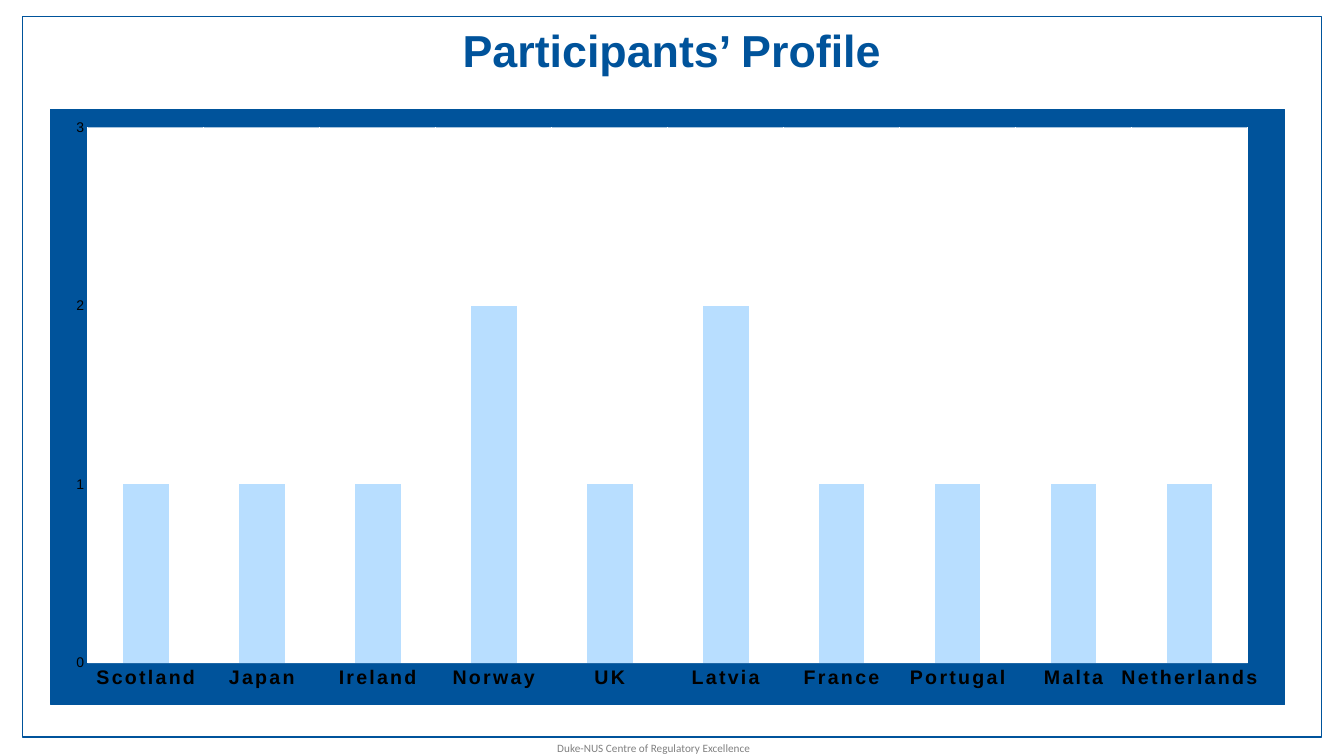
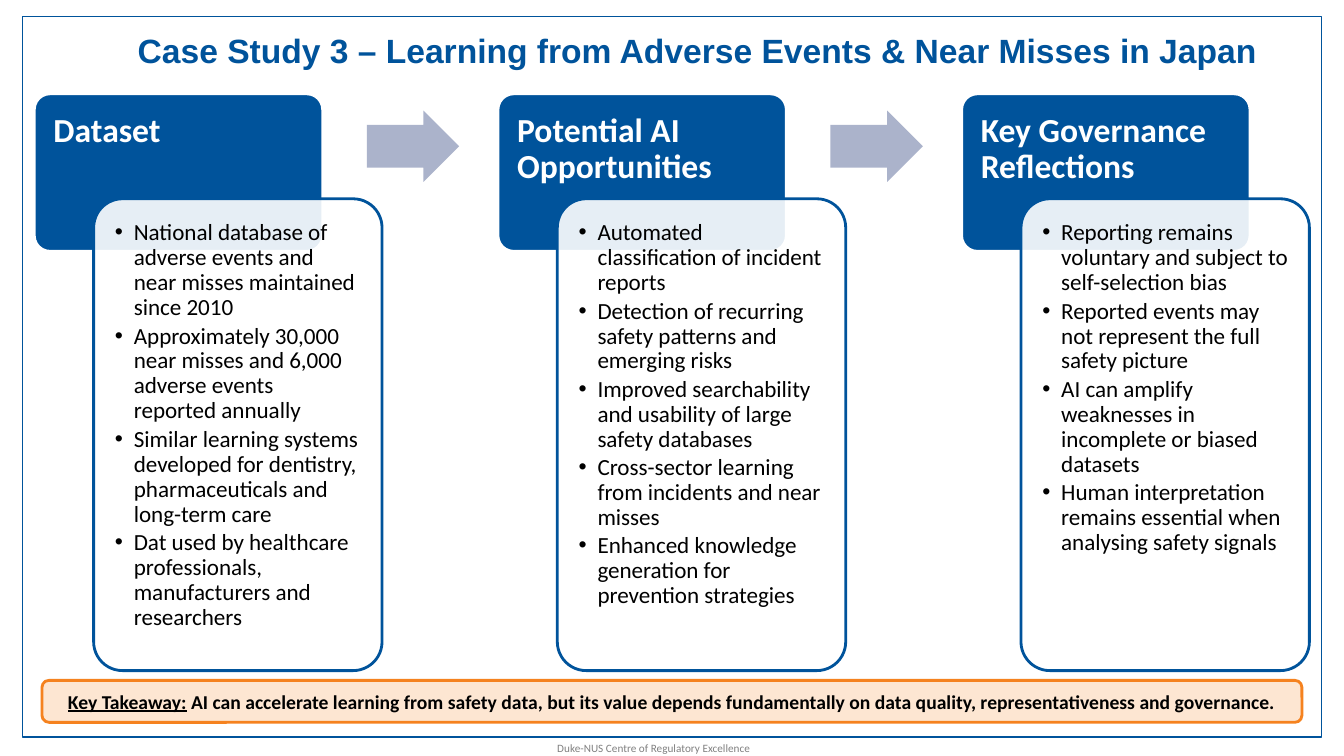
from lxml.etree import SubElement
from pptx import Presentation
from pptx.chart.data import CategoryChartData
from pptx.dml.color import RGBColor
from pptx.enum.chart import XL_CHART_TYPE, XL_TICK_MARK
from pptx.enum.shapes import MSO_SHAPE
from pptx.enum.text import MSO_ANCHOR, PP_ALIGN
from pptx.oxml import parse_xml
from pptx.oxml.ns import nsdecls, qn
from pptx.util import Pt

BLUE, WHITE, BLACK, GREY = "00539B", "FFFFFF", "000000", "808080"
BAR, ARROW, ORANGE, PEACH = "B8DEFF", "ABB3CB", "F5821F", "FDE6D2"
HEAD_FONT, BODY_FONT = "Arial", "Calibri"
SLIDE_W, SLIDE_H = 960, 540

COUNTRIES = {
    "Scotland": 1, "Japan": 1, "Ireland": 1, "Norway": 2, "UK": 1,
    "Latvia": 2, "France": 1, "Portugal": 1, "Malta": 1, "Netherlands": 1,
}

COLUMNS = [
    ("Dataset", [
        "National database of adverse events and near misses maintained since 2010",
        "Approximately 30,000 near misses and 6,000 adverse events reported annually",
        "Similar learning systems developed for dentistry, pharmaceuticals and long-term care",
        "Dat used by healthcare professionals, manufacturers and researchers",
    ]),
    ("Potential AI Opportunities", [
        "Automated classification of incident reports",
        "Detection of recurring safety patterns and emerging risks",
        "Improved searchability and usability of large safety databases",
        "Cross-sector learning from incidents and near misses",
        "Enhanced knowledge generation for prevention strategies",
    ]),
    ("Key Governance Reflections", [
        "Reporting remains voluntary and subject to self-selection bias",
        "Reported events may not represent the full safety picture",
        "AI can amplify weaknesses in incomplete or biased datasets",
        "Human interpretation remains essential when analysing safety signals",
    ]),
]
COLUMN_X, COLUMN_PITCH, CARD_W = 24.5, 331.2, 206


def rgb(hex_color):
    return RGBColor.from_string(hex_color)


def style_font(font, size, color, name=BODY_FONT, bold=False):
    font.size, font.name, font.bold = Pt(size), name, bold
    font.color.rgb = rgb(color)


def add_run(p, text, size, color, name=BODY_FONT, bold=False):
    r = p.add_run()
    r.text = text
    style_font(r.font, size, color, name, bold)
    return r


def set_frame(sp, insets=(0, 0, 0, 0), anchor=MSO_ANCHOR.MIDDLE):
    """Wrap the text, set left, top, right and bottom insets, and return the frame."""
    tf = sp.text_frame
    tf.word_wrap, tf.vertical_anchor = True, anchor
    tf.margin_left, tf.margin_top, tf.margin_right, tf.margin_bottom = map(Pt, insets)
    return tf


def add_text(s, box, text, size, color, name=BODY_FONT, bold=False, align=PP_ALIGN.LEFT):
    p = set_frame(s.shapes.add_textbox(*map(Pt, box))).paragraphs[0]
    p.alignment = align
    add_run(p, text, size, color, name, bold)


def add_box(s, kind, box, fill=None, line=None, width=2, adjust=()):
    sp = s.shapes.add_shape(kind, *map(Pt, box))
    sp.shadow.inherit = False
    for i, value in enumerate(adjust):
        sp.adjustments[i] = value
    if fill:
        sp.fill.solid()
        sp.fill.fore_color.rgb = rgb(fill)
    else:
        sp.fill.background()
    if line:
        sp.line.color.rgb = rgb(line)
        sp.line.width = Pt(width)
    else:
        sp.line.fill.background()
    return sp


def set_opacity(sp, percent):
    color = sp.element.xpath("./p:spPr/a:solidFill/a:srgbClr")[0]
    SubElement(color, qn("a:alpha"), val=str(percent * 1000))


def add_bullet(p, indent):
    pPr = p._p.get_or_add_pPr()
    pPr.set("marL", str(Pt(indent)))
    pPr.set("indent", str(-Pt(indent)))
    SubElement(pPr, qn("a:buFont"), typeface="Arial")
    SubElement(pPr, qn("a:buChar"), char="•")


def new_slide(prs, title, size, left=0):
    """Add a slide with the frame, footer and title that all slides share."""
    s = prs.slides.add_slide(prs.slide_layouts[6])
    add_box(s, MSO_SHAPE.RECTANGLE, (16, 12, 928, 514.5), line=BLUE, width=0.75)
    add_text(s, (398, 528, 170, 12), "Duke-NUS Centre of Regulatory Excellence", 8, GREY)
    add_text(s, (left, 11.5, SLIDE_W - left, 48), title, size, BLUE, HEAD_FONT, True,
             PP_ALIGN.CENTER)
    return s


def chart_area_fill(fill, line=None):
    outline = f'<a:solidFill><a:srgbClr val="{line}"/></a:solidFill>' if line else "<a:noFill/>"
    return parse_xml(
        f'<c:spPr {nsdecls("c", "a")}><a:solidFill><a:srgbClr val="{fill}"/></a:solidFill>'
        f'<a:ln w="{Pt(0.75)}">{outline}</a:ln></c:spPr>')


def place_plot(chart, x, y, w, h):
    """Fix the inner plot area, in fractions of the chart."""
    plot_area = chart.element.xpath("./c:chart/c:plotArea")[0]
    for old in plot_area.findall(qn("c:layout")):
        plot_area.remove(old)
    values = "".join(f'<c:{k} val="{v}"/>' for k, v in zip("xywh", (x, y, w, h)))
    plot_area.insert(0, parse_xml(
        f'<c:layout {nsdecls("c")}><c:manualLayout><c:layoutTarget val="inner"/>'
        f'<c:xMode val="edge"/><c:yMode val="edge"/>{values}</c:manualLayout></c:layout>'))
    plot_area.append(chart_area_fill(WHITE))


def add_country_chart(s, box):
    data = CategoryChartData(number_format="0")
    data.categories = list(COUNTRIES)
    data.add_series("Series 1", list(COUNTRIES.values()))
    chart = s.shapes.add_chart(XL_CHART_TYPE.COLUMN_CLUSTERED, *map(Pt, box), data).chart
    chart.has_legend = chart.has_title = False
    style_font(chart.font, 10, BLACK)

    plot = chart.plots[0]
    plot.gap_width, plot.vary_by_categories = 154, False
    fill = plot.series[0].format.fill
    fill.solid()
    fill.fore_color.rgb = rgb(BAR)

    cat_axis, val_axis = chart.category_axis, chart.value_axis
    for axis in (cat_axis, val_axis):
        axis.major_tick_mark = axis.minor_tick_mark = XL_TICK_MARK.NONE
        axis.format.line.fill.background()
    style_font(cat_axis.tick_labels.font, 14, BLACK, HEAD_FONT, True)
    style_font(val_axis.tick_labels.font, 10, BLACK, HEAD_FONT)
    chart.element.xpath(".//c:catAx/c:txPr//a:defRPr")[0].set("spc", "150")
    cat_axis.has_major_gridlines, val_axis.has_major_gridlines = True, False
    grid = cat_axis.major_gridlines.format.line
    grid.color.rgb, grid.width = rgb(WHITE), Pt(0.75)
    val_axis.minimum_scale, val_axis.maximum_scale, val_axis.major_unit = 0, 3, 1

    place_plot(chart, 0.03, 0.03, 0.94, 0.9)
    chart.element.find(qn("c:chart")).addnext(chart_area_fill(BLUE, BLUE))


def add_column(s, x, heading, points):
    card = add_box(s, MSO_SHAPE.ROUNDED_RECTANGLE, (x, 67, CARD_W, 112.5), BLUE, WHITE,
                   adjust=(0.1,))
    p = set_frame(card, (10.4, 10.4, 10.4, 4), MSO_ANCHOR.TOP).paragraphs[0]
    p.alignment, p.line_spacing = PP_ALIGN.LEFT, 0.9
    add_run(p, heading, 24, WHITE, bold=True)

    panel = add_box(s, MSO_SHAPE.ROUNDED_RECTANGLE, (x + 42.4, 142, CARD_W, 337), WHITE, BLUE,
                    adjust=(0.1,))
    set_opacity(panel, 90)
    tf = set_frame(panel, (9.2, 9.8, 9.2, 9.2), MSO_ANCHOR.TOP)
    for i, point in enumerate(points):
        p = tf.add_paragraph() if i else tf.paragraphs[0]
        p.alignment, p.line_spacing, p.space_after = PP_ALIGN.LEFT, 0.9, Pt(2.5)
        add_bullet(p, 13.5)
        add_run(p, point, 16.5, BLACK)


def add_takeaway(s, label, text):
    bar = add_box(s, MSO_SHAPE.ROUNDED_RECTANGLE, (30, 486, 900, 30), PEACH, ORANGE)
    p = set_frame(bar).paragraphs[0]
    p.alignment = PP_ALIGN.CENTER
    add_run(p, label, 14, BLACK, bold=True).font.underline = True
    add_run(p, " ", 14, BLACK)
    add_run(p, text, 14, BLACK, bold=True)


def build_profile(prs):
    s = new_slide(prs, "Participants’ Profile", 32)
    add_country_chart(s, (36, 77.8, 882, 426))


def build_case_study(prs):
    s = new_slide(prs, "Case Study 3 – Learning from Adverse Events & Near Misses in Japan",
                  24, left=36)
    for i, (heading, points) in enumerate(COLUMNS):
        x = COLUMN_X + i * COLUMN_PITCH
        add_column(s, x, heading, points)
        if i < len(COLUMNS) - 1:
            add_box(s, MSO_SHAPE.RIGHT_ARROW, (x + 237.5, 79, 66, 51), ARROW,
                    adjust=(0.6, 0.5))
    add_takeaway(s, "Key Takeaway:",
                 "AI can accelerate learning from safety data, but its value depends "
                 "fundamentally on data quality, representativeness and governance.")


def main():
    prs = Presentation()
    prs.slide_width, prs.slide_height = Pt(SLIDE_W), Pt(SLIDE_H)
    build_profile(prs)
    build_case_study(prs)
    prs.save("out.pptx")


if __name__ == "__main__":
    main()
